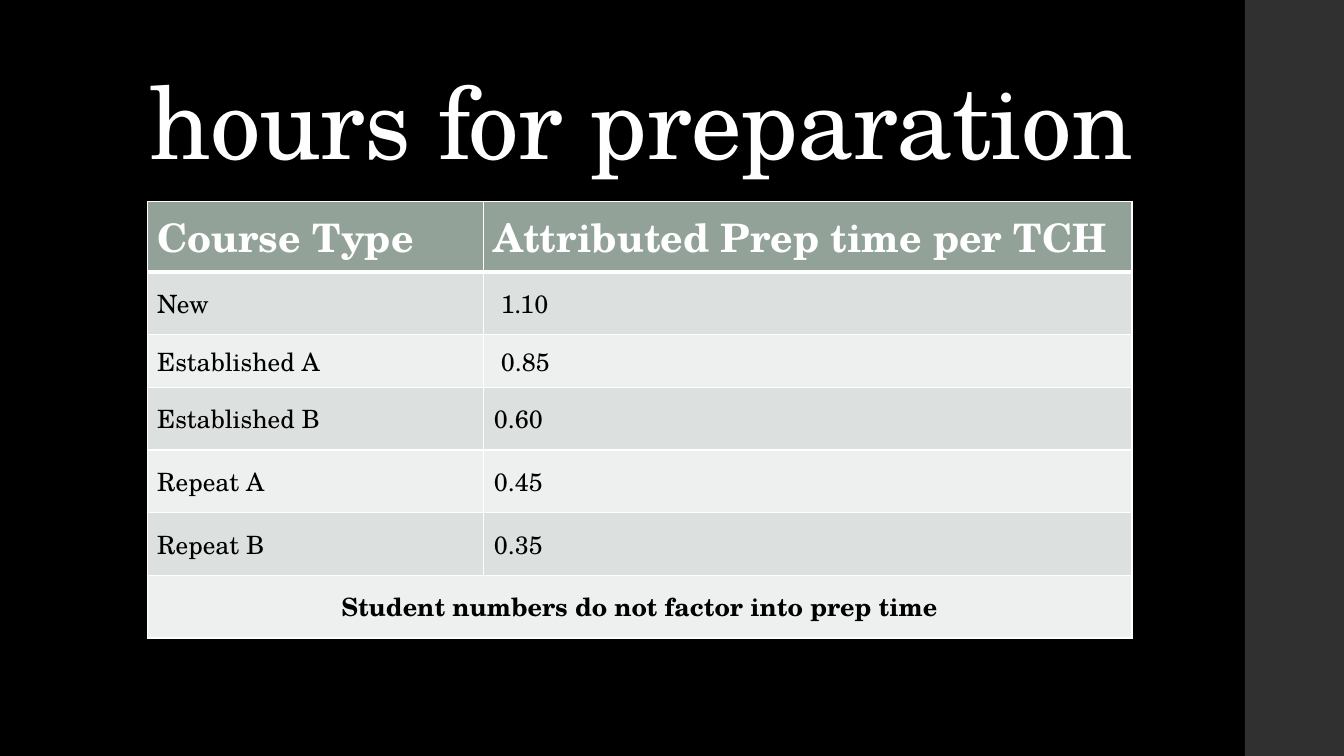
from pptx import Presentation
from pptx.dml.color import RGBColor
from pptx.enum.shapes import MSO_SHAPE
from pptx.enum.text import MSO_ANCHOR, MSO_AUTO_SIZE, PP_ALIGN
from pptx.oxml.ns import qn
from pptx.util import Pt
from lxml import etree

RECTANGLE = MSO_SHAPE.RECTANGLE
BOTTOM, MIDDLE = MSO_ANCHOR.BOTTOM, MSO_ANCHOR.MIDDLE
LEFT, CENTER = PP_ALIGN.LEFT, PP_ALIGN.CENTER
NO_AUTOFIT = MSO_AUTO_SIZE.NONE
TITLE_ONLY = 5

FONT = "TeX Gyre Schola"
BLACK, WHITE, SIDEBAR = "000000", "FFFFFF", "303030"
HEADER_FILL, ODD_FILL, EVEN_FILL = "93A299", "DCE0DE", "EEF0EF"

SLIDE_WIDTH, SLIDE_HEIGHT = 960, 540
COLUMN_WIDTHS = [240.5, 463]
ROW_HEIGHT, SHORT_ROW_HEIGHT, SHORT_ROW = 44.8, 37.4, 2
HEADER = ["Course Type", "Attributed Prep time per TCH"]
PREP_TIMES = [
    ["New", " 1.10"],
    ["Established A", " 0.85"],
    ["Established B", "0.60"],
    ["Repeat A", "0.45"],
    ["Repeat B", "0.35"],
]
FOOTNOTE = "Student numbers do not factor into prep time"


def color(hex_value):
    return RGBColor.from_string(hex_value)


def set_fill(fill, hex_value):
    fill.solid()
    fill.fore_color.rgb = color(hex_value)


def format_text(text_frame, size, hex_value, bold=False, align=LEFT):
    paragraph = text_frame.paragraphs[0]
    paragraph.alignment = align
    for run in paragraph.runs:
        run.font.name = FONT
        run.font.size = Pt(size)
        run.font.bold = bold
        run.font.color.rgb = color(hex_value)


def add_sidebar(slide):
    left = 889.2
    shape = slide.shapes.add_shape(
        RECTANGLE, Pt(left), Pt(0), Pt(SLIDE_WIDTH - left), Pt(SLIDE_HEIGHT))
    shape.shadow.inherit = False
    set_fill(shape.fill, SIDEBAR)
    shape.line.fill.background()


def set_title(slide, text):
    title = slide.shapes.title
    title.left, title.top = Pt(99.4), Pt(28.8)
    title.width, title.height = Pt(763.2), Pt(104.4)
    text_frame = title.text_frame
    text_frame.text = text
    text_frame.word_wrap = True
    text_frame.auto_size = NO_AUTOFIT
    text_frame.vertical_anchor = BOTTOM
    format_text(text_frame, 72, WHITE)
    paragraph = text_frame.paragraphs[0]
    paragraph.line_spacing = 0.9
    # Letter spacing in hundredths of a point
    paragraph.runs[0].font._element.set("spc", "-50")


def set_borders(cell, bottom_width, top_width):
    properties = cell._tc.get_or_add_tcPr()
    widths = {"a:lnL": 1, "a:lnR": 1, "a:lnT": top_width, "a:lnB": bottom_width}
    for tag, width in widths.items():
        line = etree.SubElement(properties, qn(tag), w=str(Pt(width)))
        solid = etree.SubElement(line, qn("a:solidFill"))
        etree.SubElement(solid, qn("a:srgbClr"), val=WHITE)


def add_prep_table(slide):
    rows = [HEADER, *PREP_TIMES, [FOOTNOTE, ""]]
    last = len(rows) - 1
    heights = [SHORT_ROW_HEIGHT if index == SHORT_ROW else ROW_HEIGHT
               for index in range(len(rows))]
    table = slide.shapes.add_table(
        len(rows), len(COLUMN_WIDTHS), Pt(105.1), Pt(144),
        Pt(sum(COLUMN_WIDTHS)), Pt(sum(heights))).table
    for column, width in zip(table.columns, COLUMN_WIDTHS):
        column.width = Pt(width)

    for index, values in enumerate(rows):
        table.rows[index].height = Pt(heights[index])
        is_header, is_footnote = index == 0, index == last
        band = ODD_FILL if index % 2 else EVEN_FILL
        for column_index, value in enumerate(values):
            cell = table.cell(index, column_index)
            cell.text_frame.text = value
            cell.vertical_anchor = MIDDLE
            format_text(cell.text_frame,
                        28 if is_header else 18,
                        WHITE if is_header else BLACK,
                        bold=is_header or is_footnote,
                        align=CENTER if is_footnote else LEFT)
            set_borders(cell, bottom_width=3 if is_header else 1,
                        top_width=3 if index == 1 else 1)
            set_fill(cell.fill, HEADER_FILL if is_header else band)

    # The footnote spans the full width
    table.cell(last, 0).merge(table.cell(last, 1))


def main():
    presentation = Presentation()
    presentation.slide_width = Pt(SLIDE_WIDTH)
    presentation.slide_height = Pt(SLIDE_HEIGHT)
    slide = presentation.slides.add_slide(presentation.slide_layouts[TITLE_ONLY])
    set_fill(slide.background.fill, BLACK)
    add_sidebar(slide)
    set_title(slide, "hours for preparation")
    add_prep_table(slide)
    presentation.save("out.pptx")


if __name__ == "__main__":
    main()
